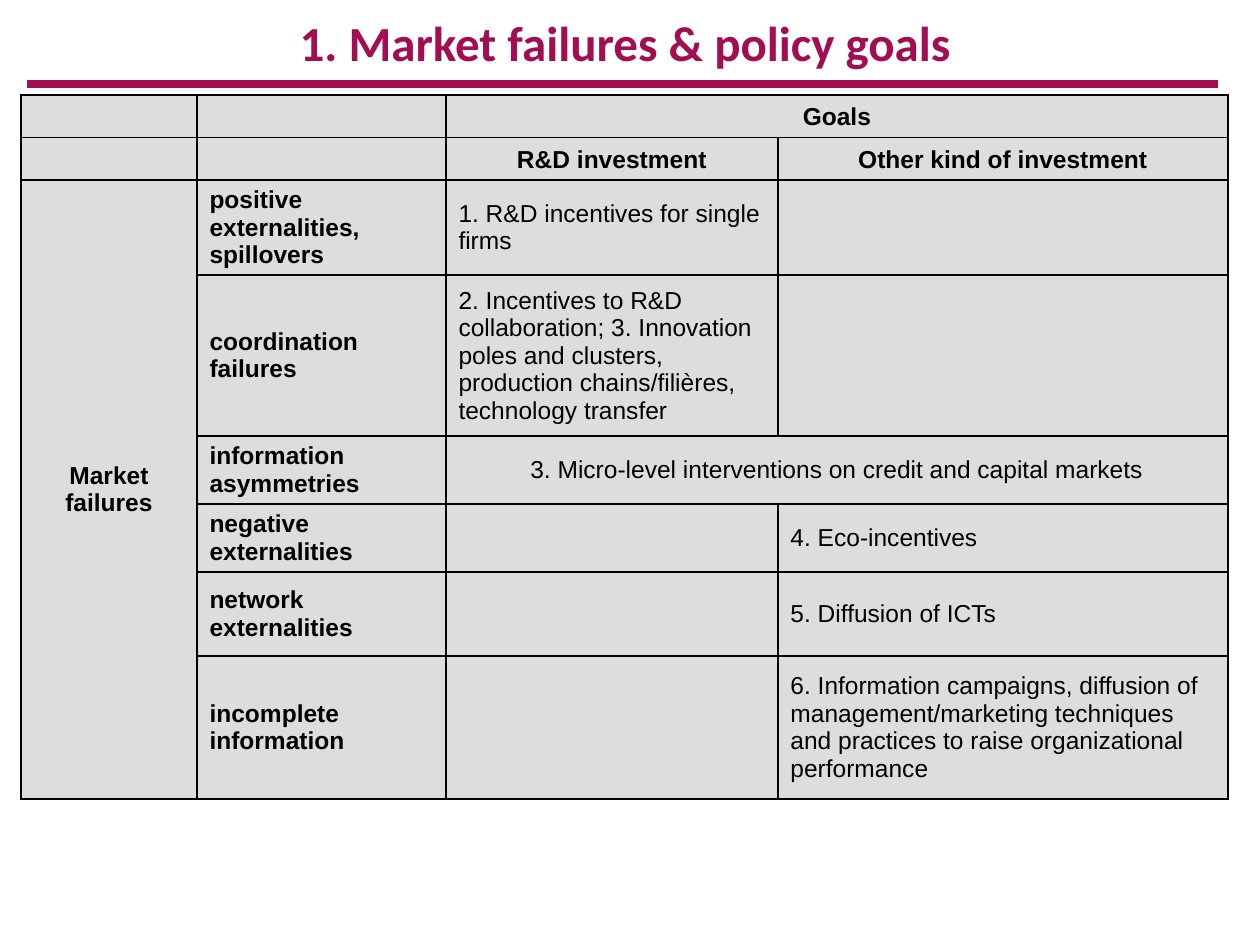
"""Build a slide with a table of market failures and policy goals."""
from lxml import etree
from pptx import Presentation
from pptx.dml.color import RGBColor
from pptx.enum.shapes import MSO_CONNECTOR
from pptx.enum.text import MSO_ANCHOR, MSO_AUTO_SIZE, PP_ALIGN
from pptx.oxml import parse_xml
from pptx.oxml.ns import nsdecls, qn
from pptx.util import Pt

CENTER, LEFT = PP_ALIGN.CENTER, PP_ALIGN.LEFT
TOP, MIDDLE, BOTTOM = MSO_ANCHOR.TOP, MSO_ANCHOR.MIDDLE, MSO_ANCHOR.BOTTOM
NO_AUTOFIT = MSO_AUTO_SIZE.NONE
STRAIGHT = MSO_CONNECTOR.STRAIGHT

TITLE = "1. Market failures & policy goals"
ROWS = [
    ("", "", "Goals", ""),
    ("", "", "R&D investment", "Other kind of investment"),
    ("Market failures", "positive externalities, spillovers",
     "1. R&D incentives for single firms", ""),
    ("", "coordination failures",
     "2. Incentives to R&D collaboration; 3. Innovation poles and clusters, "
     "production chains/filières, technology transfer", ""),
    ("", "information asymmetries",
     "3. Micro-level interventions on credit and capital markets", ""),
    ("", "negative externalities", "", "4. Eco-incentives"),
    ("", "network externalities", "", "5. Diffusion of ICTs"),
    ("", "incomplete information", "",
     "6. Information campaigns, diffusion of management/marketing techniques "
     "and practices to raise organizational performance"),
]
MERGES = [((0, 2), (0, 3)), ((2, 0), (7, 0)), ((4, 2), (4, 3))]
HEADER_ROWS, HEADER_COLUMNS = 2, 2
COLUMN_WIDTHS = [176, 249, 332, 450]
ROW_HEIGHTS = [42, 40, 95, 161, 68, 68, 84, 143]
TABLE_LEFT, TABLE_TOP = 21, 95
ACCENT, BLACK, GREY = "A30D51", "000000", "DDDDDD"
TITLE_FONT = {"name": "Calibri", "size": Pt(28), "bold": True}
CELL_FONT = {"name": "Arial", "size": Pt(14)}


def px(value):
    """Turn pixels into EMU."""
    return round(value * 914400 / 126)


def color(value):
    """Turn a hex string into a colour."""
    return RGBColor.from_string(value)


def apply(target, formats):
    """Set each attribute named in a dict."""
    for name, value in formats.items():
        setattr(target, name, value)


def add_title(slide):
    """Place and format the title."""
    shape = slide.shapes.title
    apply(shape, {"left": px(63), "top": 0, "width": px(1124), "height": px(73)})
    frame = shape.text_frame
    apply(frame, {"text": TITLE, "word_wrap": True, "auto_size": NO_AUTOFIT,
                  "vertical_anchor": TOP})
    paragraph = frame.paragraphs[0]
    apply(paragraph, {"alignment": CENTER, "line_spacing": 1.1})
    font = paragraph.runs[0].font
    apply(font, TITLE_FONT)
    font.color.rgb = color(ACCENT)


def add_rule(slide):
    """Draw the line below the title."""
    rule = slide.shapes.add_connector(STRAIGHT, px(27), px(84), px(1218), px(84))
    rule.line.color.rgb = color(ACCENT)
    rule.line.width = Pt(4.5)
    etree.SubElement(rule._element.spPr, qn("a:effectLst"))


def add_borders(cell):
    """Draw thin black lines on all sides of a cell."""
    properties = cell._tc.get_or_add_tcPr()
    for index, side in enumerate(("lnL", "lnR", "lnT", "lnB")):
        properties.insert(index, parse_xml(
            f'<a:{side} {nsdecls("a")} w="{Pt(1)}"><a:solidFill>'
            f'<a:srgbClr val="{BLACK}"/></a:solidFill></a:{side}>'))


def format_cell(cell, text, row, column):
    """Fill, border and write one cell."""
    cell.fill.solid()
    cell.fill.fore_color.rgb = color(GREY)
    add_borders(cell)
    is_header = row < HEADER_ROWS
    cell.vertical_anchor = BOTTOM if is_header else MIDDLE
    paragraph = cell.text_frame.paragraphs[0]
    centered = is_header or column == 0 or (row, column) == MERGES[2][0]
    paragraph.alignment = CENTER if centered else LEFT
    if not text:
        end = etree.SubElement(paragraph._p, qn("a:endParaRPr"))
        end.set("sz", str(CELL_FONT["size"].centipoints))
        return
    run = paragraph.add_run()
    run.text = text
    apply(run.font, CELL_FONT)
    run.font.bold = is_header or column < HEADER_COLUMNS
    run.font.color.rgb = color(BLACK)


def add_goals_table(slide):
    """Add the table of failures and goals."""
    table = slide.shapes.add_table(
        len(ROWS), len(COLUMN_WIDTHS), px(TABLE_LEFT), px(TABLE_TOP),
        px(sum(COLUMN_WIDTHS)), px(sum(ROW_HEIGHTS))).table
    apply(table, {"first_row": False, "horz_banding": False})
    for column, width in zip(table.columns, COLUMN_WIDTHS):
        column.width = px(width)
    for row, height in zip(table.rows, ROW_HEIGHTS):
        row.height = px(height)
    for row, texts in enumerate(ROWS):
        for column, text in enumerate(texts):
            format_cell(table.cell(row, column), text, row, column)
    for first, last in MERGES:
        table.cell(*first).merge(table.cell(*last))


def main():
    """Build and save the presentation."""
    presentation = Presentation()
    apply(presentation, {"slide_width": px(1260), "slide_height": px(945)})
    slide = presentation.slides.add_slide(presentation.slide_layouts[5])
    add_title(slide)
    add_rule(slide)
    add_goals_table(slide)
    presentation.save("out.pptx")


if __name__ == "__main__":
    main()
